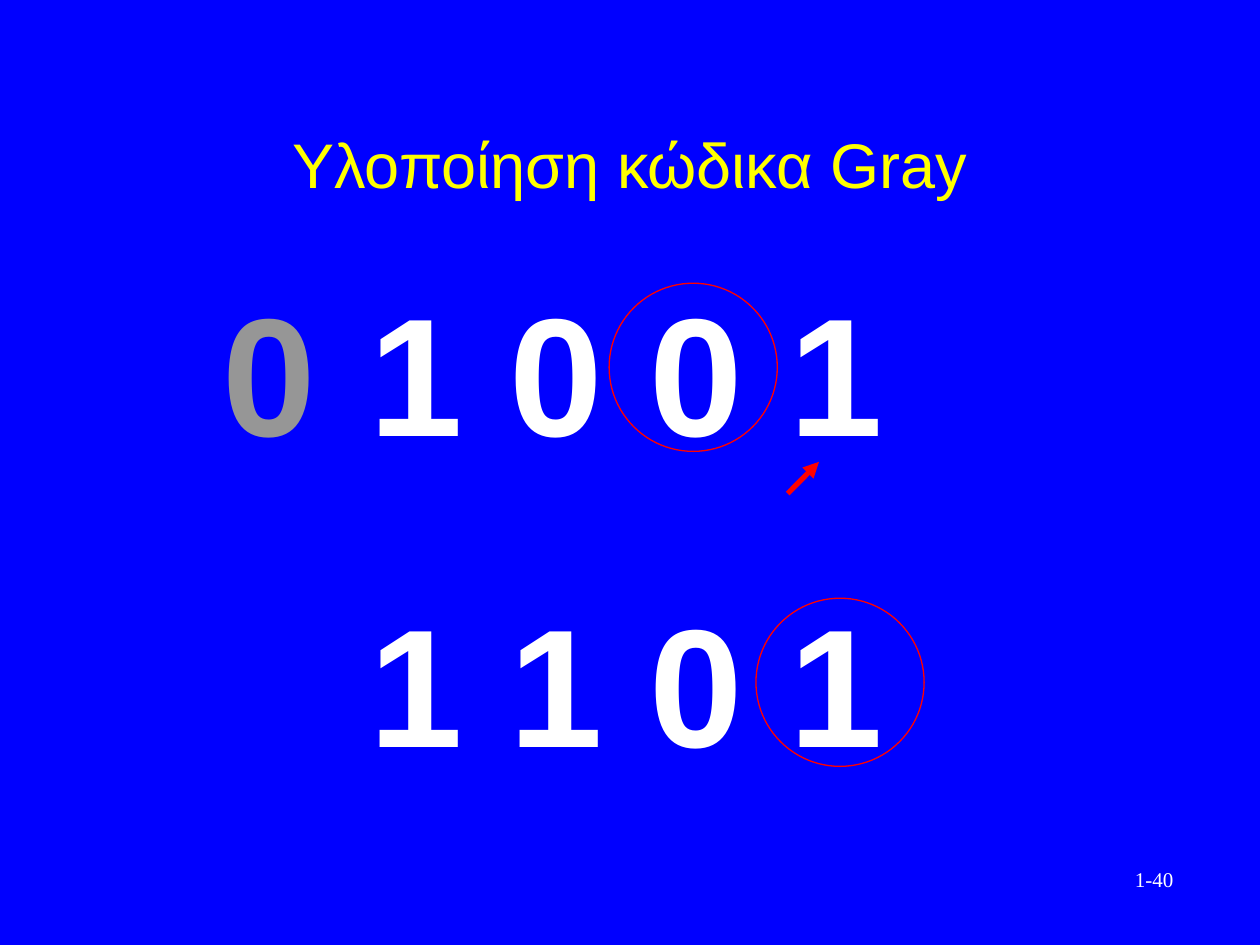
from lxml import etree
from pptx import Presentation
from pptx.dml.color import RGBColor
from pptx.enum.shapes import MSO_CONNECTOR, MSO_SHAPE
from pptx.enum.text import MSO_ANCHOR, PP_ALIGN
from pptx.oxml.ns import qn
from pptx.util import Cm, Pt

STRAIGHT = MSO_CONNECTOR.STRAIGHT
OVAL = MSO_SHAPE.OVAL
TOP, MIDDLE = MSO_ANCHOR.TOP, MSO_ANCHOR.MIDDLE
LEFT, CENTER = PP_ALIGN.LEFT, PP_ALIGN.CENTER

BLUE = RGBColor(0x00, 0x00, 0xFF)
YELLOW = RGBColor(0xFF, 0xFF, 0x00)
WHITE = RGBColor(0xFF, 0xFF, 0xFF)
GRAY = RGBColor(0x96, 0x96, 0x96)
RED = RGBColor(0xFF, 0x00, 0x00)

BINARY_TOP = 5.29
GRAY_CODE_TOP = 11.56
DIGITS_LEFT = 7.2
DIGITS_WIDTH = 10.87
CIRCLE_SIZE = 3.39


def add_text(slide, text, left, top, width, height, size, color,
             font="Arial", bold=False, wrap=False, align=LEFT, anchor=TOP):
    shape = slide.shapes.add_textbox(Cm(left), Cm(top), Cm(width), Cm(height))
    frame = shape.text_frame
    frame.word_wrap = wrap
    frame.vertical_anchor = anchor
    paragraph = frame.paragraphs[0]
    paragraph.alignment = align
    run = paragraph.add_run()
    run.text = text
    run.font.name = font
    run.font.size = Pt(size)
    run.font.bold = bold
    run.font.color.rgb = color


def add_digits(slide, text, left, top, width, color=WHITE):
    add_text(slide, text, left, top, width, 4.32, 96, color, bold=True)


def add_circle(slide, left, top):
    shape = slide.shapes.add_shape(
        OVAL, Cm(left), Cm(top), Cm(CIRCLE_SIZE), Cm(CIRCLE_SIZE))
    shape.shadow.inherit = False
    shape.fill.background()
    shape.line.color.rgb = RED
    shape.line.width = Pt(0.75)


def add_arrow(slide, start_x, start_y, end_x, end_y):
    connector = slide.shapes.add_connector(
        STRAIGHT, Cm(start_x), Cm(start_y), Cm(end_x), Cm(end_y))
    connector.line.color.rgb = RED
    connector.line.width = Pt(3)
    properties = connector._element.spPr
    line = properties.find(qn("a:ln"))
    etree.SubElement(line, qn("a:tailEnd"), type="triangle")
    etree.SubElement(properties, qn("a:effectLst"))


def main():
    presentation = Presentation()
    presentation.slide_width = Cm(25.4)
    presentation.slide_height = Cm(19.05)
    slide = presentation.slides.add_slide(presentation.slide_layouts[6])
    background = slide.background.fill
    background.solid()
    background.fore_color.rgb = BLUE

    add_text(slide, "1-40", 22.63, 17.35, 1.35, 0.76, 12, WHITE,
             font="Times New Roman")
    add_text(slide, "Υλοποίηση κώδικα Gray", 1.9, 1.7, 21.6, 3.18, 36, YELLOW,
             wrap=True, align=CENTER, anchor=MIDDLE)
    add_digits(slide, "1 0 0 1", DIGITS_LEFT, BINARY_TOP, DIGITS_WIDTH)
    add_circle(slide, 12.28, 5.71)
    add_circle(slide, 15.24, 12.06)
    add_digits(slide, "1 1 0 1", DIGITS_LEFT, GRAY_CODE_TOP, DIGITS_WIDTH)
    add_arrow(slide, 15.88, 9.95, 16.51, 9.31)
    add_digits(slide, "0", 4.23, BINARY_TOP, 2.39, GRAY)

    presentation.save("out.pptx")


if __name__ == "__main__":
    main()
